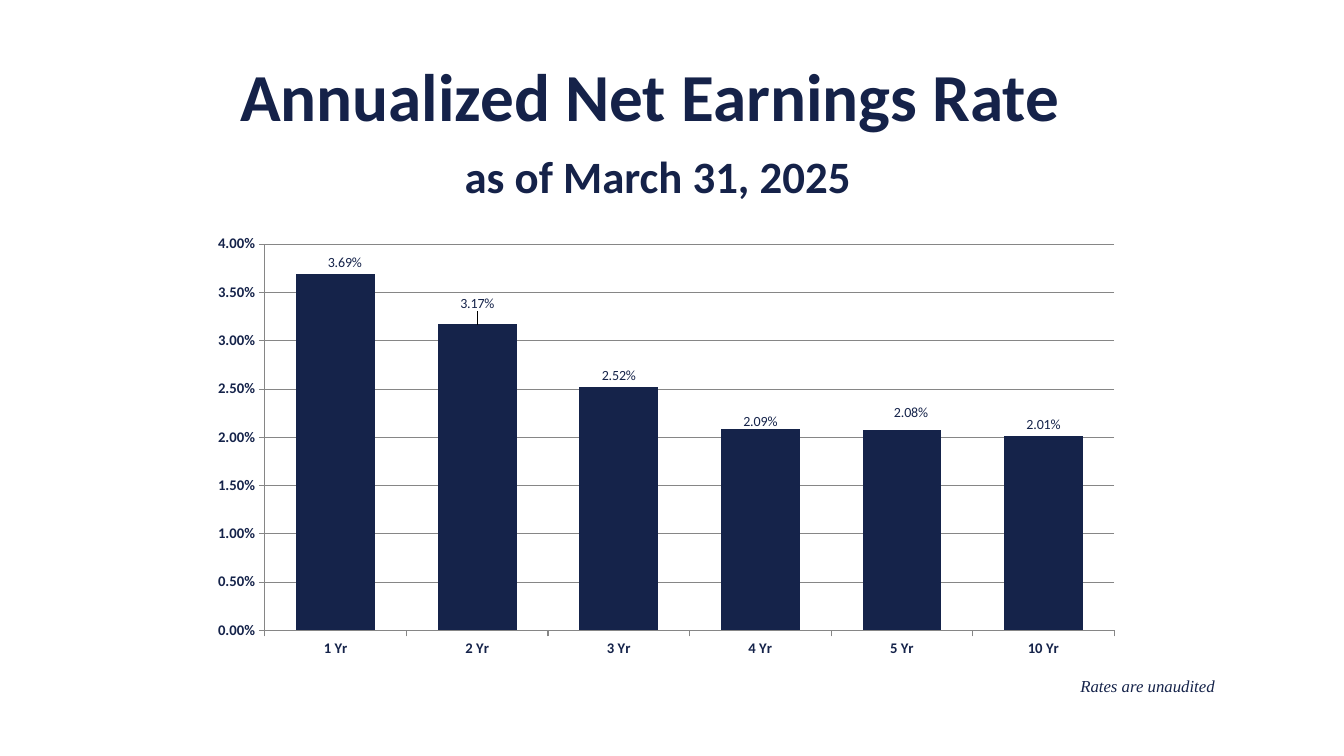
"""Build the annualized net earnings rate slide."""
import dataclasses
import typing

import lxml.etree
import pptx
import pptx.chart.axis
import pptx.chart.data
import pptx.chart.series
import pptx.dml.color
import pptx.enum.chart
import pptx.enum.text
import pptx.oxml
import pptx.oxml.ns
import pptx.slide
import pptx.util

Pt = pptx.util.Pt
COLORS = {"navy": "15234A", "title": "152249", "grid": "868686"}
PERCENT = "0.00%"
PLOT_LAYOUT = {
    "layoutTarget": "inner",
    "xMode": "edge",
    "yMode": "edge",
    "x": 0.065,
    "y": 0.031,
    "w": 0.931,
    "h": 0.833,
}


@dataclasses.dataclass
class Line:
    text: str
    font: dict[str, typing.Any]
    color: str
    layout: dict[str, typing.Any] = dataclasses.field(default_factory=dict)
    indent: float = 0


@dataclasses.dataclass
class TextBox:
    frame: tuple[float, float, float, float]
    format: dict[str, typing.Any]
    lines: list[Line]


@dataclasses.dataclass
class Rate:
    term: str
    value: float
    label_shift: tuple[float, float] = (0, 0)


RATES = [
    Rate("1 Yr", 0.0369, (0.01, 0)),
    Rate("2 Yr", 0.0317, (0, -0.02)),
    Rate("3 Yr", 0.0252),
    Rate("4 Yr", 0.0209, (0, 0.01)),
    Rate("5 Yr", 0.0208, (0.01, -0.01)),
    Rate("10 Yr", 0.0201),
]

CENTERED = {"alignment": pptx.enum.text.PP_ALIGN.CENTER, "line_spacing": 0.9}
TITLE_FONT = {"name": "Calibri", "bold": True}
TEXT_BOXES = [
    TextBox(
        (32.4, 87.1, 864, 64.1),
        {
            "word_wrap": True,
            "vertical_anchor": pptx.enum.text.MSO_ANCHOR.BOTTOM,
            "margin_bottom": Pt(6),
        },
        [
            Line("Annualized Net Earnings Rate", TITLE_FONT | {"size": Pt(48)}, "title", CENTERED),
            Line(
                "as of March 31, 2025",
                TITLE_FONT | {"size": Pt(32)},
                "title",
                CENTERED | {"space_before": Pt(13.6)},
                indent=11,
            ),
        ],
    ),
    TextBox(
        (764.6, 478.8, 167.8, 21.6),
        {"word_wrap": True},
        [
            Line(
                "Rates are unaudited",
                {"name": "Times New Roman", "size": Pt(12), "italic": True},
                "navy",
            )
        ],
    ),
]


def set_format(target: typing.Any, values: dict[str, typing.Any]) -> None:
    for name, value in values.items():
        setattr(target, name, value)


def rgb(color: str) -> pptx.dml.color.RGBColor:
    return pptx.dml.color.RGBColor.from_string(COLORS[color])


def style_font(font: typing.Any, values: dict[str, typing.Any], color: str) -> None:
    set_format(font, values)
    font.color.rgb = rgb(color)


def add_text(slide: pptx.slide.Slide, item: TextBox) -> None:
    frame = slide.shapes.add_textbox(*map(Pt, item.frame)).text_frame
    set_format(frame, item.format)
    for index, line in enumerate(item.lines):
        para = frame.add_paragraph() if index else frame.paragraphs[0]
        set_format(para, line.layout)
        if line.indent:
            para._p.get_or_add_pPr().set("marL", str(Pt(line.indent)))
        span = para.add_run()
        span.text = line.text
        style_font(span.font, line.font, line.color)


def make_layout(values: dict[str, typing.Any]) -> lxml.etree._Element:
    layout = pptx.oxml.parse_xml(
        f"<c:layout {pptx.oxml.ns.nsdecls('c')}><c:manualLayout/></c:layout>"
    )
    for name, value in values.items():
        entry = lxml.etree.SubElement(layout[0], pptx.oxml.ns.qn(f"c:{name}"))
        entry.set("val", str(value))
    return layout


def style_axis(axis: pptx.chart.axis._BaseAxis, values: dict[str, typing.Any]) -> None:
    set_format(axis, values)
    axis.major_tick_mark = pptx.enum.chart.XL_TICK_MARK.OUTSIDE
    axis.minor_tick_mark = pptx.enum.chart.XL_TICK_MARK.NONE
    style_font(axis.tick_labels.font, {"name": "Calibri", "size": Pt(10.5), "bold": True}, "navy")
    axis.format.line.color.rgb = rgb("grid")
    axis.format.line.width = Pt(0.75)


def label_bar(series: pptx.chart.series.BarSeries, index: int, rate: Rate) -> None:
    label = series.points[index].data_label
    style_font(label.font, {"name": "Calibri", "size": Pt(10), "bold": False}, "navy")
    label.position = pptx.enum.chart.XL_LABEL_POSITION.OUTSIDE_END
    if any(rate.label_shift):
        element = series.data_labels._element.findall(pptx.oxml.ns.qn("c:dLbl"))[index]
        element.insert(1, make_layout(dict(zip("xy", rate.label_shift))))


def add_rate_chart(slide: pptx.slide.Slide) -> None:
    data = pptx.chart.data.CategoryChartData(number_format=PERCENT)
    data.categories = [rate.term for rate in RATES]
    data.add_series("Series 1", [rate.value for rate in RATES])
    chart = slide.shapes.add_chart(
        pptx.enum.chart.XL_CHART_TYPE.COLUMN_CLUSTERED,
        *map(Pt, (146.9, 164.2, 651.6, 331.2)),
        data,
    ).chart
    set_format(chart, {"has_legend": False, "has_title": False})
    style_font(chart.font, {"name": "Calibri", "size": Pt(18)}, "navy")
    plot_area = chart._chartSpace.chart.plotArea
    for layout in plot_area.findall(pptx.oxml.ns.qn("c:layout")):
        plot_area.remove(layout)
    plot_area.insert(0, make_layout(PLOT_LAYOUT))

    style_axis(chart.category_axis, {"has_major_gridlines": False})
    value_axis = chart.value_axis
    style_axis(
        value_axis,
        {
            "has_major_gridlines": True,
            "minimum_scale": 0,
            "maximum_scale": 0.04,
            "major_unit": 0.005,
        },
    )
    set_format(value_axis.tick_labels, {"number_format": PERCENT, "number_format_is_linked": False})
    value_axis.major_gridlines.format.line.color.rgb = rgb("grid")
    value_axis.major_gridlines.format.line.width = Pt(0.75)

    plot = chart.plots[0]
    set_format(plot, {"gap_width": 80, "vary_by_categories": False})
    series = plot.series[0]
    series.format.fill.solid()
    series.format.fill.fore_color.rgb = rgb("navy")
    set_format(
        series.data_labels,
        {"show_value": True, "number_format": PERCENT, "number_format_is_linked": False},
    )
    for index, rate in enumerate(RATES):
        label_bar(series, index, rate)


def main() -> None:
    deck = pptx.Presentation()
    set_format(deck, {"slide_width": Pt(960), "slide_height": Pt(540)})
    page = deck.slides.add_slide(deck.slide_layouts[6])
    add_rate_chart(page)
    for item in TEXT_BOXES:
        add_text(page, item)
    deck.save("out.pptx")


if __name__ == "__main__":
    main()
